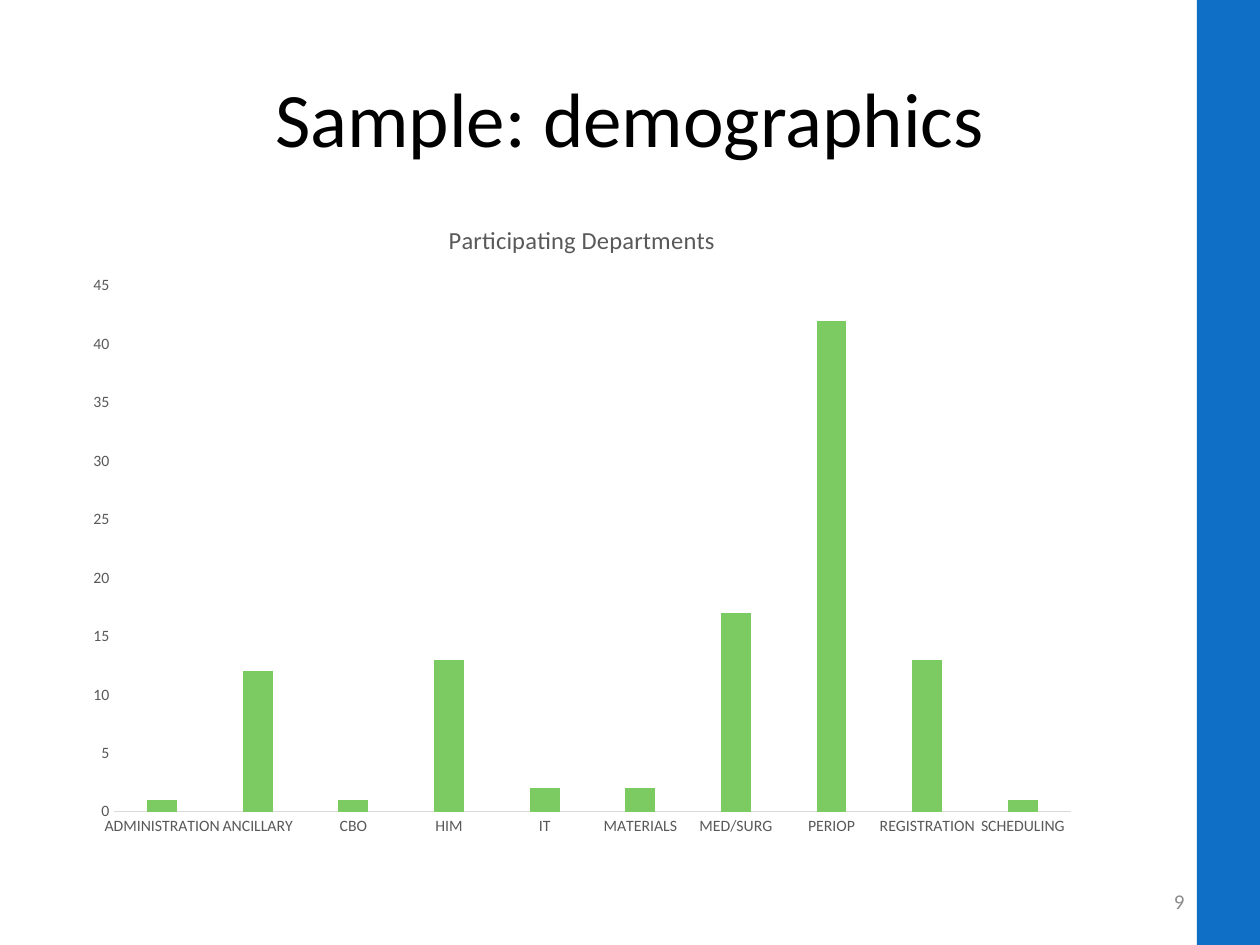
import pptx
import pptx.chart.data
import pptx.dml.color
import pptx.enum.chart
import pptx.enum.shapes
import pptx.enum.text
import pptx.util

PX = 914400 // 126
FONT = "Calibri"
COLORS = {
    "band": "0F6FC6",
    "bar": "7CCA62",
    "title": "000000",
    "label": "595959",
    "axis": "D9D9D9",
    "number": "8C8C8C",
}
DEPARTMENTS = {
    "ADMINISTRATION": 1,
    "ANCILLARY": 12,
    "CBO": 1,
    "HIM": 13,
    "IT": 2,
    "MATERIALS": 2,
    "MED/SURG": 17,
    "PERIOP": 42,
    "REGISTRATION": 13,
    "SCHEDULING": 1,
}


def px(*lengths):
    return [pptx.util.Emu(length * PX) for length in lengths]


def color(name):
    return pptx.dml.color.RGBColor.from_string(COLORS[name])


def style_font(font, size, name):
    font.name = FONT
    font.size = pptx.util.Pt(size)
    font.bold = False
    font.color.rgb = color(name)


def add_band(page, *area):
    band = page.shapes.add_shape(pptx.enum.shapes.MSO_SHAPE.RECTANGLE, *px(*area))
    band.shadow.inherit = False
    band.fill.solid()
    band.fill.fore_color.rgb = color("band")
    band.line.fill.background()


def add_text(page, area, text, size, name, align):
    box = page.shapes.add_textbox(*px(*area))
    frame = box.text_frame
    frame.word_wrap = True
    frame.vertical_anchor = pptx.enum.text.MSO_ANCHOR.MIDDLE
    frame.text = text
    para = frame.paragraphs[0]
    para.alignment = align
    style_font(para.runs[0].font, size, name)


def style_axis(axis):
    axis.major_tick_mark = pptx.enum.chart.XL_TICK_MARK.NONE
    axis.minor_tick_mark = pptx.enum.chart.XL_TICK_MARK.NONE
    axis.has_major_gridlines = False
    style_font(axis.tick_labels.font, 9, "label")


def add_department_chart(page, *area):
    data = pptx.chart.data.CategoryChartData()
    data.categories = list(DEPARTMENTS)
    data.add_series("Series 1", list(DEPARTMENTS.values()))
    kind = pptx.enum.chart.XL_CHART_TYPE.COLUMN_CLUSTERED
    chart = page.shapes.add_chart(kind, *px(*area), data).chart
    style_font(chart.font, 10, "title")
    chart.has_legend = False

    chart.has_title = True
    heading = chart.chart_title.text_frame
    heading.text = "Participating Departments"
    style_font(heading.paragraphs[0].runs[0].font, 14, "label")
    chart.chart_title.include_in_layout = False

    style_axis(chart.category_axis)
    chart.category_axis.format.line.color.rgb = color("axis")
    chart.category_axis.format.line.width = pptx.util.Pt(0.75)

    style_axis(chart.value_axis)
    chart.value_axis.format.line.fill.background()
    chart.value_axis.minimum_scale = 0
    chart.value_axis.maximum_scale = 45
    chart.value_axis.major_unit = 5

    plot = chart.plots[0]
    plot.gap_width = 219
    plot.overlap = -27
    plot.vary_by_categories = False
    bars = plot.series[0].format
    bars.fill.solid()
    bars.fill.fore_color.rgb = color("bar")


def main():
    deck = pptx.Presentation()
    deck.slide_width, deck.slide_height = px(1260, 945)
    page = deck.slides.add_slide(deck.slide_layouts[6])
    align = pptx.enum.text.PP_ALIGN
    add_band(page, 1197, 0, 63, 945)
    add_text(page, (63, 38, 1134, 157), "Sample: demographics", 44, "title", align.CENTER)
    add_text(page, (903, 876, 294, 50), "9", 12, "number", align.RIGHT)
    add_department_chart(page, 73, 199, 1018, 649)
    deck.save("out.pptx")


if __name__ == "__main__":
    main()
